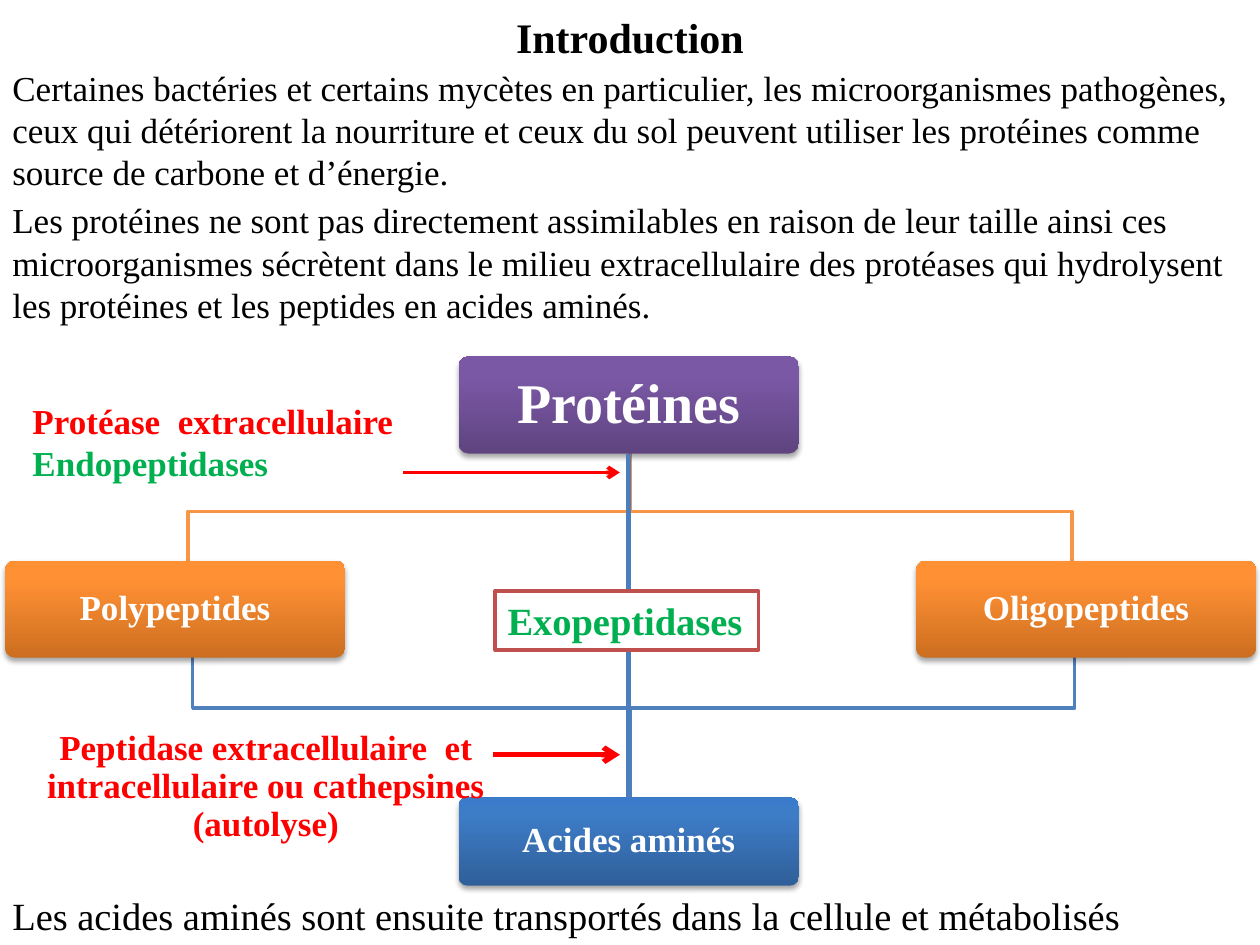
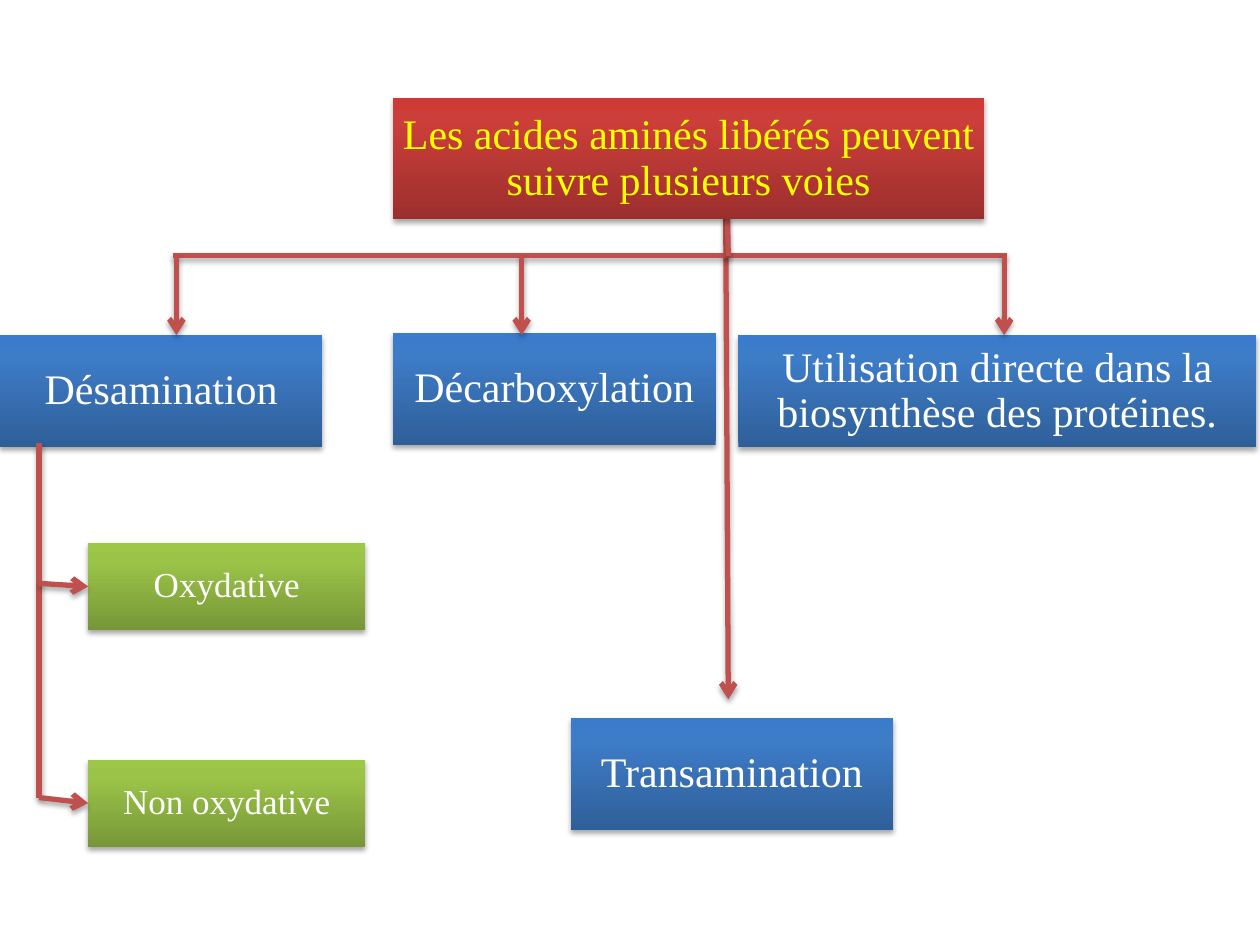
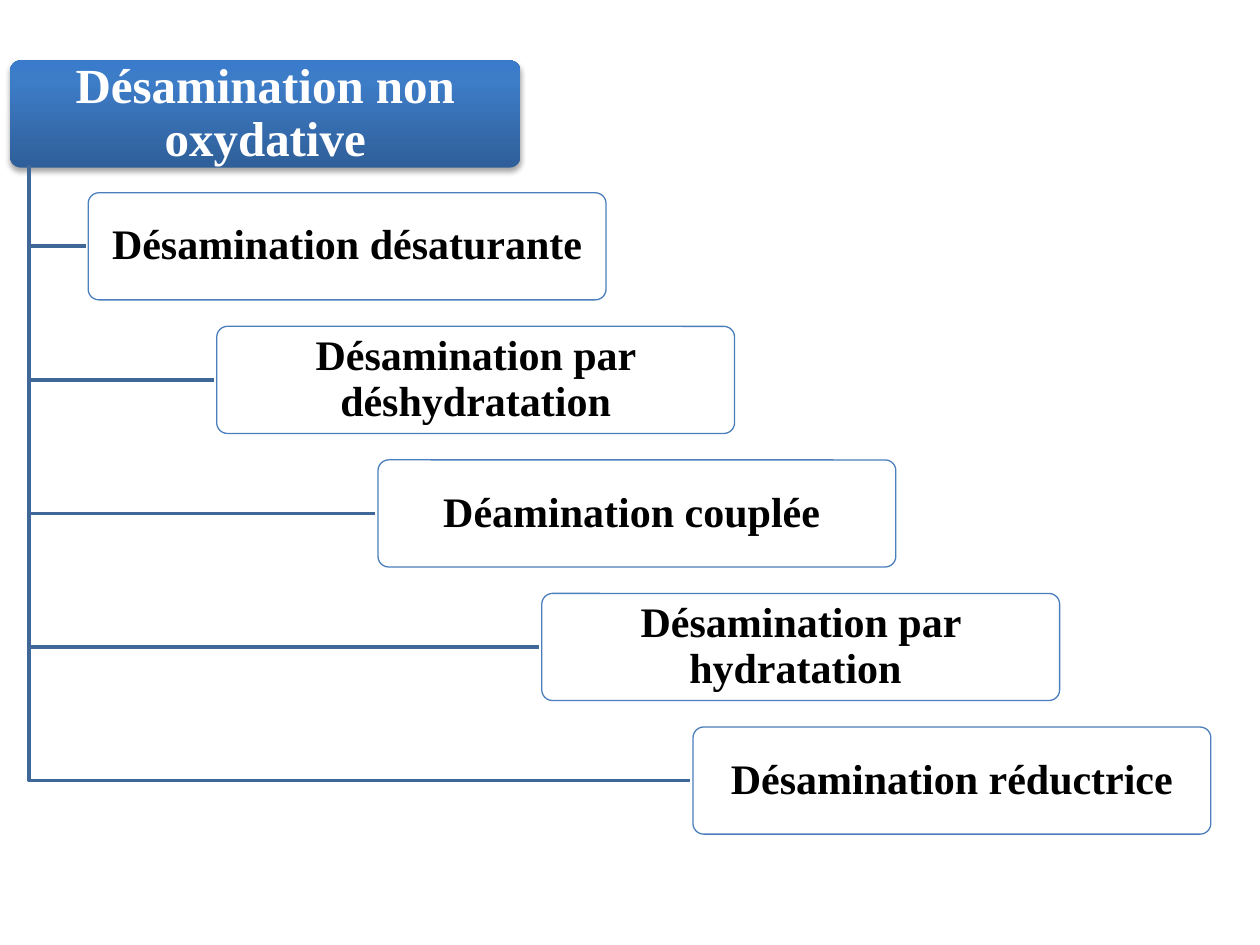
from copy import deepcopy

from lxml.etree import SubElement
from pptx import Presentation
from pptx.dml.color import RGBColor
from pptx.enum.shapes import MSO_CONNECTOR as Link, MSO_SHAPE as Preset
from pptx.enum.text import MSO_ANCHOR as Anchor, MSO_AUTO_SIZE as AutoSize, PP_ALIGN as Align
from pptx.oxml.ns import qn
from pptx.util import Inches, Pt

FONT = "Times New Roman"
BLACK = RGBColor(0x00, 0x00, 0x00)
WHITE = RGBColor(0xFF, 0xFF, 0xFF)
RED = RGBColor(0xFF, 0x00, 0x00)
GREEN = RGBColor(0x00, 0xB0, 0x50)
YELLOW = RGBColor(0xFF, 0xFF, 0x00)
ORANGE = RGBColor(0xF7, 0x96, 0x46)
BLUE = RGBColor(0x4F, 0x81, 0xBD)
MID_BLUE = RGBColor(0x4B, 0x7E, 0xBC)
DARK_BLUE = RGBColor(0x3F, 0x67, 0x97)
BRICK = RGBColor(0xC0, 0x50, 0x4D)

# Gradients run from the bottom of a box to its top.
STOP_POSITIONS = (0, 0.8, 1)
BLUE_GRADIENT = (RGBColor(0x2F, 0x5F, 0x99), RGBColor(0x3D, 0x7C, 0xC7), RGBColor(0x3A, 0x7C, 0xCB))
PURPLE_GRADIENT = (RGBColor(0x5F, 0x44, 0x80), RGBColor(0x7B, 0x58, 0xA6), RGBColor(0x7C, 0x57, 0xA8))
ORANGE_GRADIENT = (RGBColor(0xCC, 0x6E, 0x20), RGBColor(0xFF, 0x90, 0x34), RGBColor(0xFF, 0x91, 0x36))
GREEN_GRADIENT = (RGBColor(0x77, 0x97, 0x37), RGBColor(0x9B, 0xC3, 0x48), RGBColor(0x9D, 0xC7, 0x46))
RED_GRADIENT = (RGBColor(0x9C, 0x2F, 0x2D), RGBColor(0xCB, 0x3E, 0x3A), RGBColor(0xCE, 0x3B, 0x37))

TITLE_ONLY, BLANK = 5, 6
TOP, LEFT, BOTTOM = 0, 1, 2


def set_effects(shape, shadow):
    """Give the shape the soft shadow of the deck, or none at all."""
    properties = shape._element.spPr
    effects = properties.find(qn("a:effectLst"))
    if effects is None:
        effects = SubElement(properties, qn("a:effectLst"))
    if shadow:
        outer = SubElement(effects, qn("a:outerShdw"), blurRad=str(Pt(3.1)),
                           dist=str(Pt(1.8)), dir="5400000", rotWithShape="0")
        color = SubElement(outer, qn("a:srgbClr"), val="000000")
        SubElement(color, qn("a:alpha"), val="35000")


def set_gradient(shape, colors):
    shape.fill.gradient()
    shape.fill.gradient_angle = 90
    stops = shape._element.spPr.find(".//" + qn("a:gsLst"))
    stops.append(deepcopy(stops[0]))
    for stop, position, color in zip(shape.fill.gradient_stops, STOP_POSITIONS, colors):
        stop.position = position
        stop.color.rgb = color


def set_outline(shape, color, width):
    shape.line.color.rgb = color
    shape.line.width = Pt(width)


def write(shape, lines, size, bold=False, align=Align.LEFT, spacing=1.0, **frame_format):
    """Fill the shape with (text, color) lines, one paragraph each."""
    frame = shape.text_frame
    frame.word_wrap = True
    for name, value in frame_format.items():
        setattr(frame, name, value)
    for index, (text, color) in enumerate(lines):
        para = frame.add_paragraph() if index else frame.paragraphs[0]
        para.alignment = align
        para.line_spacing = spacing
        span = para.add_run()
        span.text = text
        span.font.color.rgb = color
        for name, value in {"name": FONT, "size": Pt(size), "bold": bold}.items():
            setattr(span.font, name, value)


def add_text(page, place, lines, size, **text_format):
    box = page.shapes.add_textbox(*map(Inches, place))
    write(box, lines, size, auto_size=AutoSize.SHAPE_TO_FIT_TEXT, **text_format)


def add_node(page, place, text, size, gradient=None, color=WHITE, bold=False,
             rounded=False, inset=0.02):
    """Add a diagram box: shaded with a gradient, or white with a thin outline."""
    preset = Preset.ROUNDED_RECTANGLE if rounded else Preset.RECTANGLE
    node = page.shapes.add_shape(preset, *map(Inches, place))
    if rounded:
        node.adjustments[0] = 0.1
    if gradient:
        set_gradient(node, gradient)
        node.line.fill.background()
    else:
        node.fill.solid()
        node.fill.fore_color.rgb = WHITE
        set_outline(node, MID_BLUE, 0.75)
    node.shadow.inherit = False
    set_effects(node, shadow=bool(gradient))
    margins = {f"margin_{side}": Inches(inset) for side in ("left", "top", "right", "bottom")}
    write(node, [(text, color)], size, bold, Align.CENTER, 0.9,
          vertical_anchor=Anchor.MIDDLE, **margins)
    return node


def add_line(page, start, end, color, width, arrow=False, shadow=False):
    line = page.shapes.add_connector(Link.STRAIGHT, *map(Inches, start + end))
    set_outline(line, color, width)
    if arrow:
        SubElement(line._element.spPr.find(qn("a:ln")), qn("a:tailEnd"), type="arrow")
    set_effects(line, shadow)
    return line


def add_branch(page, points, color):
    """Add an open angular path through the points."""
    start, *others = [tuple(map(Inches, point)) for point in points]
    builder = page.shapes.build_freeform(*start)
    builder.add_line_segments(others, close=False)
    branch = builder.convert_to_shape()
    branch.fill.background()
    set_outline(branch, color, 2)
    branch.shadow.inherit = False


def add_introduction(deck):
    page = deck.slides.add_slide(deck.slide_layouts[TITLE_ONLY])
    title = page.shapes.title
    for name, value in {"left": 0, "top": 0.04, "width": 10, "height": 0.5}.items():
        setattr(title, name, Inches(value))
    write(title, [("Introduction", BLACK)], 24, bold=True, align=Align.CENTER,
          auto_size=AutoSize.SHAPE_TO_FIT_TEXT, vertical_anchor=Anchor.TOP)

    for top, height, size, text in (
        (0.48, 1.11, 20, "Certaines bactéries et certains mycètes en particulier, les microorganismes "
         "pathogènes, ceux qui détériorent la nourriture et ceux du sol peuvent utiliser les "
         "protéines comme source de carbone et d’énergie."),
        (1.53, 1.11, 20, "Les protéines ne sont pas directement assimilables en raison de leur taille "
         "ainsi ces  microorganismes sécrètent dans le milieu extracellulaire des protéases qui "
         "hydrolysent les protéines et les peptides en acides aminés."),
        (7.03, 0.47, 22, "Les acides aminés sont ensuite transportés dans la cellule et métabolisés"),
    ):
        add_text(page, (0, top, 10, height), [(text, BLACK)], size)

    center = 5
    for upper_x, lower_x in ((1.49, 1.53), (8.51, 8.53)):
        add_branch(page, [(center, 3.39), (center, 4.06), (upper_x, 4.06), (upper_x, 4.72)], ORANGE)
        add_branch(page, [(lower_x, 4.91), (lower_x, 5.62), (center, 5.62), (center, 6.33)], BLUE)

    style = {"bold": True, "rounded": True, "inset": 0.12}
    proteins = add_node(page, (3.64, 2.83, 2.7, 0.77), "Protéines", 32, PURPLE_GRADIENT, **style)
    acids = add_node(page, (3.64, 6.33, 2.7, 0.7), "Acides aminés", 20, BLUE_GRADIENT, **style)
    for left, text in ((0.04, "Polypeptides"), (7.27, "Oligopeptides")):
        add_node(page, (left, 4.45, 2.7, 0.77), text, 20, ORANGE_GRADIENT, **style)

    add_text(page, (0.16, 3.12, 3.44, 0.77),
             [("Protéase  extracellulaire", RED), ("Endopeptidases", GREEN)], 20, bold=True)
    add_text(page, (0, 5.75, 4.22, 1.01),
             [("Peptidase extracellulaire  et intracellulaire ou cathepsines (autolyse)", RED)],
             20, bold=True, align=Align.CENTER, spacing=0.9)
    add_line(page, (3.2, 3.75), (4.92, 3.75), RED, 2.25, arrow=True)
    add_line(page, (3.91, 5.99), (4.92, 5.99), RED, 3, arrow=True)

    trunk = add_line(page, (center, 3.6), (center, 6.33), MID_BLUE, 3)
    trunk.begin_connect(proteins, BOTTOM)
    trunk.end_connect(acids, TOP)

    enzyme = page.shapes.add_shape(Preset.RECTANGLE, *map(Inches, (3.93, 4.69, 2.09, 0.47)))
    enzyme.fill.solid()
    enzyme.fill.fore_color.rgb = WHITE
    set_outline(enzyme, BRICK, 2)
    enzyme.shadow.inherit = False
    write(enzyme, [("Exopeptidases", GREEN)], 22, bold=True, word_wrap=False,
          auto_size=AutoSize.SHAPE_TO_FIT_TEXT, vertical_anchor=Anchor.TOP)


def add_pathways(deck):
    page = deck.slides.add_slide(deck.slide_layouts[BLANK])
    for left, top, width, text in (
        (0, 2.66, 2.56, "Désamination"),
        (3.12, 2.64, 2.56, "Décarboxylation"),
        (5.86, 2.66, 4.11, "Utilisation directe dans la biosynthèse des protéines."),
        (4.53, 5.7, 2.56, "Transamination"),
    ):
        add_node(page, (left, top, width, 0.89), text, 24, BLUE_GRADIENT)

    style = {"color": BRICK, "width": 3, "shadow": True}
    rail_y, trunk_x = 2.03, 5.78
    add_line(page, (5.76, 1.74), (trunk_x, 5.55), arrow=True, **style)
    for rail_end in (1.37, 7.99):
        add_line(page, (trunk_x, rail_y), (rail_end, rail_y), **style)
    for x in (1.4, 4.14, 7.97):
        add_line(page, (x, rail_y), (x, 2.66), arrow=True, **style)
    add_line(page, (trunk_x, rail_y), (5.77, 1.48), arrow=True, **style)

    side_x = 0.31
    add_line(page, (side_x, 6.33), (side_x, 3.52), **style)
    for top, start_y, text in ((4.31, 4.63, "Oxydative"), (6.03, 6.33, "Non oxydative")):
        node = add_node(page, (0.7, top, 2.2, 0.69), text, 20, GREEN_GRADIENT)
        arrow = add_line(page, (side_x, start_y), (0.7, start_y), arrow=True, **style)
        arrow.end_connect(node, LEFT)

    add_node(page, (3.12, 0.78, 4.69, 0.96),
             "Les acides aminés libérés peuvent suivre plusieurs voies", 24, RED_GRADIENT, YELLOW)


def add_deamination_types(deck):
    page = deck.slides.add_slide(deck.slide_layouts[BLANK])
    height, step, first_top = 0.85, 1.06, 1.53
    style = {"bold": True, "rounded": True, "inset": 0.07}
    add_node(page, (0.08, 0.48, 4.05, height), "Désamination non oxydative", 28,
             BLUE_GRADIENT, **style)
    for row, (left, text) in enumerate((
        (0.7, "Désamination désaturante"),
        (1.72, "Désamination par déshydratation"),
        (3, "Déamination couplée "),
        (4.3, "Désamination par hydratation "),
        (5.5, "Désamination réductrice"),
    )):
        top = first_top + row * step
        add_node(page, (left, top, 4.11, height), text, 24, color=BLACK, **style)
        middle = top + height / 2
        add_branch(page, [(0.23, 1.31), (0.23, middle), (left - 0.02, middle)], DARK_BLUE)


def main():
    deck = Presentation()
    deck.slide_width, deck.slide_height = Inches(10), Inches(7.5)
    add_introduction(deck)
    add_pathways(deck)
    add_deamination_types(deck)
    deck.save("out.pptx")


if __name__ == "__main__":
    main()
